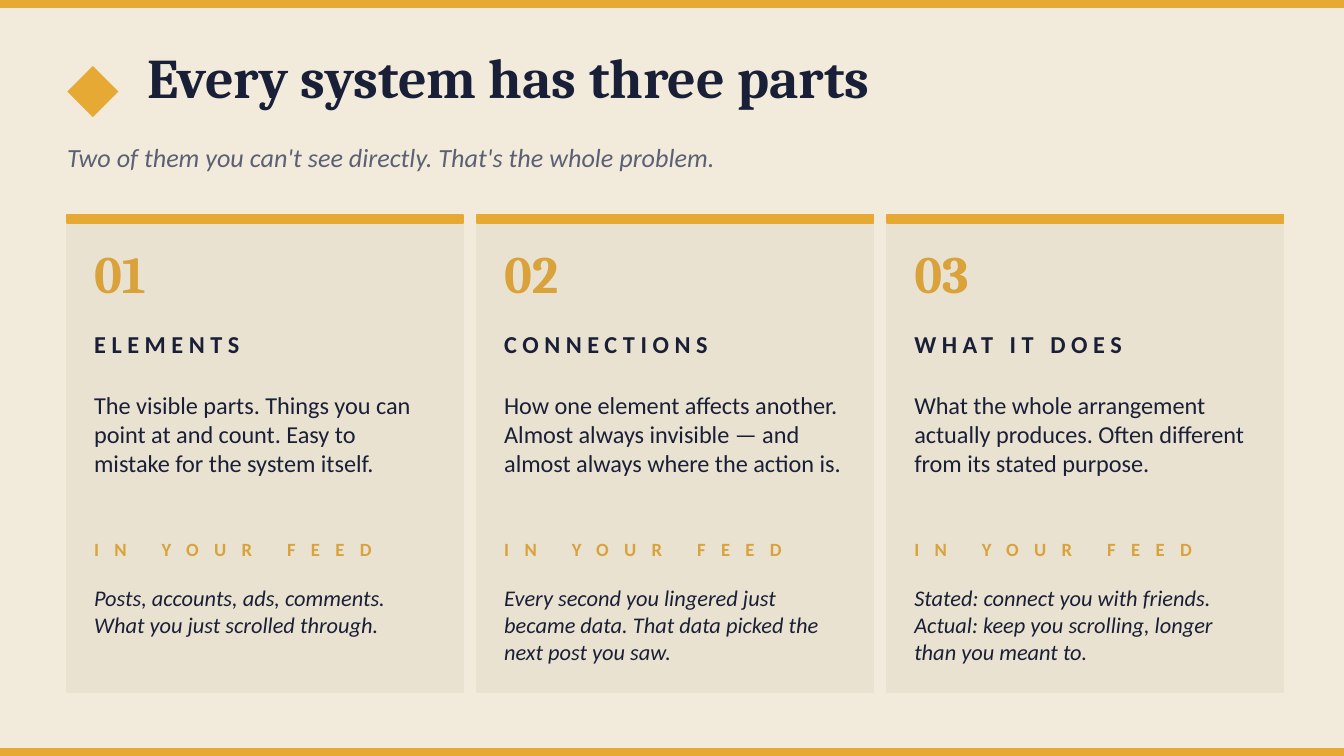
from typing import NamedTuple

from pptx import Presentation
from pptx.dml.color import RGBColor
from pptx.enum import shapes, text
from pptx.util import Cm, Pt

GOLD = RGBColor(0xE5, 0xA9, 0x34)
OCHRE = RGBColor(0xD9, 0xA2, 0x3A)
NAVY = RGBColor(0x1A, 0x1F, 0x38)
GREY = RGBColor(0x5C, 0x60, 0x75)
CREAM = RGBColor(0xF2, 0xEB, 0xDB)
SAND = RGBColor(0xEA, 0xE2, 0xD0)

WIDTH, HEIGHT = 25.4, 14.29
EDGE = 0.13
LEFT, TOP = 1.27, 4.06
CARD_W, CARD_H = 7.49, 9.02
PITCH = 7.75
PAD = 0.51


class Part(NamedTuple):
    title: str
    body: str
    feed: str


PARTS = [
    Part("ELEMENTS",
         "The visible parts. Things you can point at and count. "
         "Easy to mistake for the system itself.",
         "Posts, accounts, ads, comments. What you just scrolled through."),
    Part("CONNECTIONS",
         "How one element affects another. Almost always invisible — and "
         "almost always where the action is.",
         "Every second you lingered just became data. "
         "That data picked the next post you saw."),
    Part("WHAT IT DOES",
         "What the whole arrangement actually produces. "
         "Often different from its stated purpose.",
         "Stated: connect you with friends. "
         "Actual: keep you scrolling, longer than you meant to."),
]


def add_rect(slide, x: float, y: float, w: float, h: float,
             color: RGBColor) -> None:
    rect = slide.shapes.add_shape(shapes.MSO_SHAPE.RECTANGLE,
                                  Cm(x), Cm(y), Cm(w), Cm(h))
    rect.shadow.inherit = False
    rect.fill.solid()
    rect.fill.fore_color.rgb = color
    rect.line.color.rgb = color
    rect.line.width = Pt(1)


def add_text(slide, words: str, x: float, y: float, w: float, h: float, *,
             size: float, color: RGBColor = NAVY, face: str = "Calibri",
             bold: bool = False, italic: bool = False,
             track: float = 0, after: float = 0) -> None:
    """Add a text box; track is the letter spacing in points."""
    frame = slide.shapes.add_textbox(Cm(x), Cm(y), Cm(w), Cm(h)).text_frame
    frame.word_wrap = True
    frame.vertical_anchor = text.MSO_ANCHOR.TOP
    frame.margin_left = frame.margin_right = 0
    frame.margin_top = frame.margin_bottom = 0
    para = frame.paragraphs[0]
    if after:
        para.space_after = Pt(after)
    run = para.add_run()
    run.text = words
    font = run.font
    font.name, font.size = face, Pt(size)
    font.bold, font.italic = bold, italic
    font.color.rgb = color
    if track:
        run._r.get_or_add_rPr().set("spc", str(round(track * 100)))


def add_card(slide, index: int, part: Part) -> None:
    left = LEFT + index * PITCH
    x, w = left + PAD, CARD_W - 2 * PAD
    add_rect(slide, left, TOP, CARD_W, CARD_H, SAND)
    add_rect(slide, left, TOP, CARD_W, 0.15, GOLD)
    add_text(slide, f"{index + 1:02}", x, 4.57, w, 1.27,
             size=28, color=OCHRE, face="Cambria", bold=True)
    add_text(slide, part.title, x, 6.22, w, 1.02,
             size=13, bold=True, track=3)
    add_text(slide, part.body, x, 7.37, w, 2.54, size=13, after=4)
    add_text(slide, "IN YOUR FEED", x, 10.16, w, 0.76,
             size=10, color=OCHRE, bold=True, track=8.26)
    add_text(slide, part.feed, x, 11.05, w, 1.9,
             size=12, italic=True, after=4)


def main() -> None:
    deck = Presentation()
    deck.slide_width, deck.slide_height = Cm(WIDTH), Cm(HEIGHT)
    slide = deck.slides.add_slide(deck.slide_layouts[6])
    slide.background.fill.solid()
    slide.background.fill.fore_color.rgb = CREAM

    for y in (0, HEIGHT - EDGE):
        add_rect(slide, 0, y, WIDTH, EDGE, GOLD)
    add_text(slide, "◆", LEFT, 0.81, 1.52, 1.78,
             size=36, color=GOLD, face="Cambria", bold=True)
    add_text(slide, "Every system has three parts", 2.79, 0.81, 21.59, 1.78,
             size=30, face="Cambria", bold=True)
    add_text(slide,
             "Two of them you can't see directly. That's the whole problem.",
             LEFT, 2.67, 22.86, 1.02, size=14, color=GREY, italic=True)
    for index, part in enumerate(PARTS):
        add_card(slide, index, part)

    deck.save("out.pptx")


if __name__ == "__main__":
    main()
